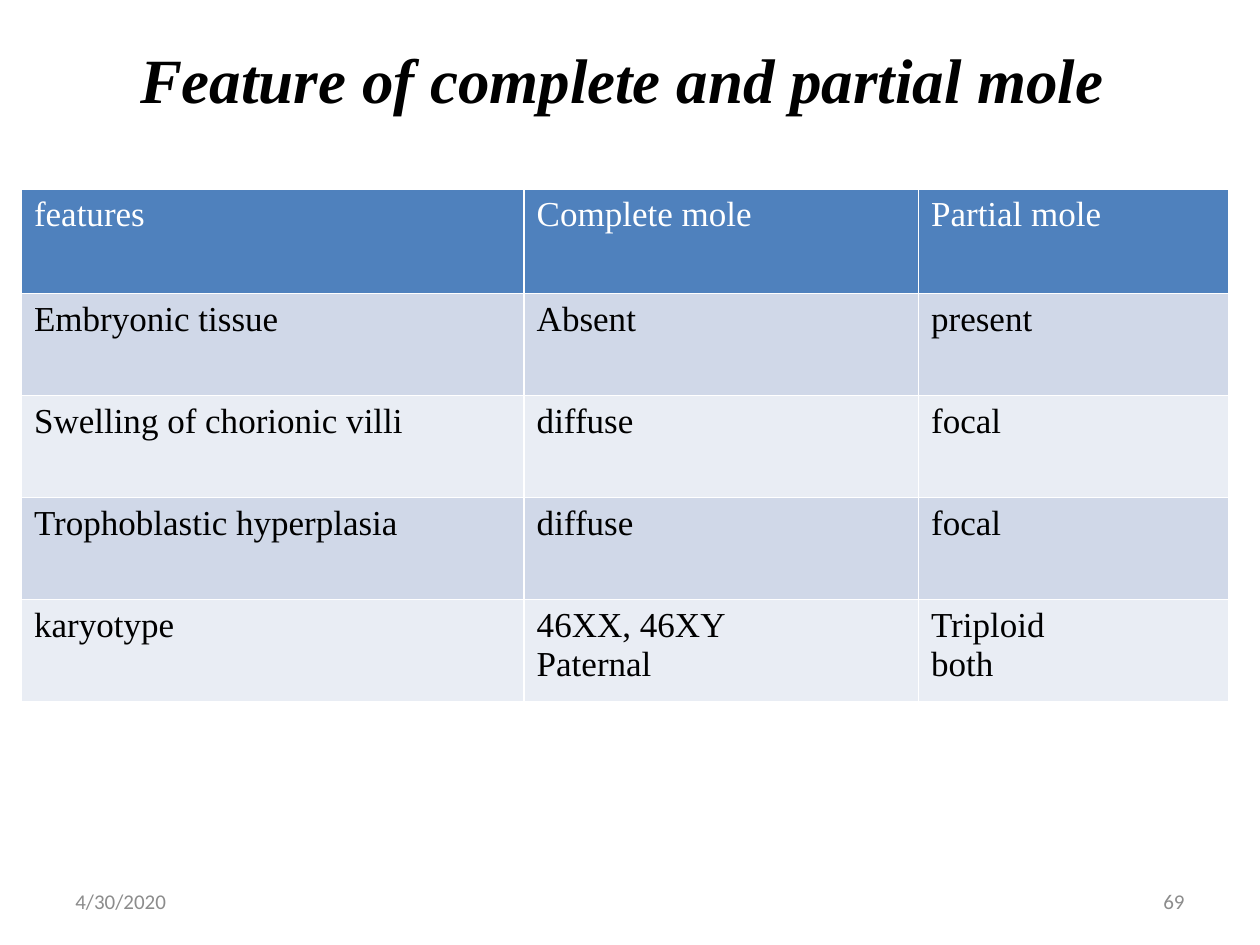
from pptx import Presentation
from pptx.dml.color import RGBColor
from pptx.enum.text import MSO_ANCHOR as Anchor, PP_ALIGN as Align
from pptx.util import Inches, Pt

COLORS = {
    "text": "000000",
    "white": "FFFFFF",
    "head": "4F81BD",
    "odd": "D0D8E8",
    "even": "E9EDF4",
    "foot": "8C8C8C",
}
SERIF = "Times New Roman"
WIDTHS = [3.99, 3.13, 2.46]
HEIGHTS = [0.83] + [0.81] * 4
ROWS = [
    ["features", "Complete mole", "Partial mole"],
    ["Embryonic tissue", "Absent", "present"],
    ["Swelling of chorionic villi", "diffuse", "focal"],
    ["Trophoblastic hyperplasia", "diffuse", "focal"],
    ["karyotype", "46XX, 46XY\nPaternal", "Triploid\nboth"],
]


def color(name):
    return RGBColor.from_string(COLORS[name])


def write(frame, text, size, tone, face=SERIF, bold=False, italic=False, align=Align.LEFT):
    frame.text = text
    for para in frame.paragraphs:
        para.alignment = align
        font = para.font
        font.name, font.size = face, Pt(size)
        font.bold, font.italic = bold, italic
        font.color.rgb = color(tone)


def add_title(slide, text):
    title = slide.shapes.title
    title.left = title.top = Inches(0)
    title.width, title.height = Inches(10), Inches(1.25)
    title.text_frame.vertical_anchor = Anchor.MIDDLE
    write(title.text_frame, text, 36, "text", bold=True, italic=True, align=Align.CENTER)


def add_grid(slide):
    # The default table style supplies the white rules
    table = slide.shapes.add_table(
        len(ROWS), len(WIDTHS), Inches(0.17), Inches(1.5),
        Inches(sum(WIDTHS)), Inches(sum(HEIGHTS))).table
    for col, width in zip(table.columns, WIDTHS):
        col.width = Inches(width)
    for i, (row, height) in enumerate(zip(table.rows, HEIGHTS)):
        row.height = Inches(height)
        fill = "head" if i == 0 else "odd" if i % 2 else "even"
        for cell, text in zip(row.cells, ROWS[i]):
            cell.fill.solid()
            cell.fill.fore_color.rgb = color(fill)
            write(cell.text_frame, text, 20, "text" if i else "white")


def add_foot(slide, left, text, align):
    box = slide.shapes.add_textbox(Inches(left), Inches(6.95), Inches(2.33), Inches(0.4))
    frame = box.text_frame
    frame.word_wrap = True
    frame.vertical_anchor = Anchor.MIDDLE
    write(frame, text, 12, "foot", face="Calibri", align=align)


def main():
    deck = Presentation()
    deck.slide_width, deck.slide_height = Inches(10), Inches(7.5)
    slide = deck.slides.add_slide(deck.slide_layouts[5])
    add_title(slide, "Feature of complete and partial mole ")
    add_grid(slide)
    # Date and slide number
    add_foot(slide, 0.5, "4/30/2020", Align.LEFT)
    add_foot(slide, 7.17, "69", Align.RIGHT)
    deck.save("out.pptx")


if __name__ == "__main__":
    main()
